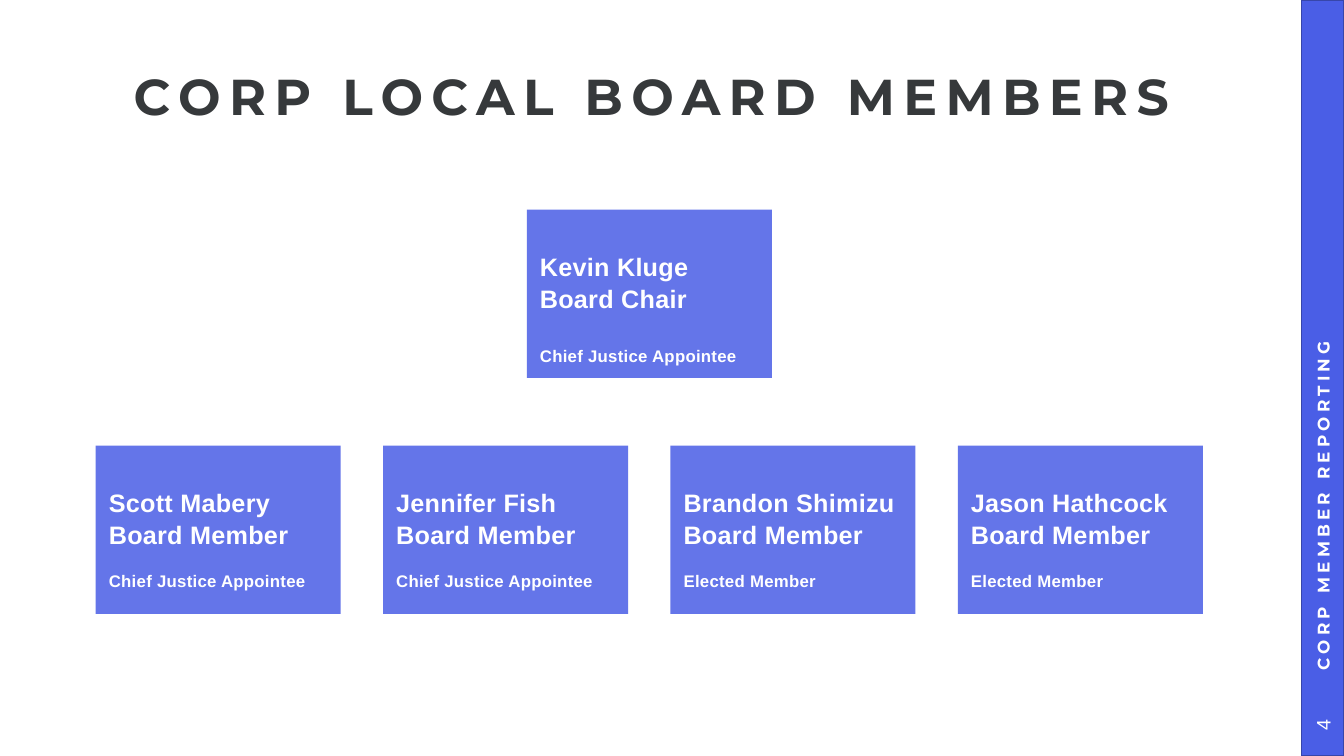
import dataclasses
import lxml.etree
import pptx
import pptx.dml.color
import pptx.enum.shapes
import pptx.enum.text
import pptx.oxml.ns
import pptx.util

Inches = pptx.util.Inches
Pt = pptx.util.Pt
Align = pptx.enum.text.PP_ALIGN
Anchor = pptx.enum.text.MSO_ANCHOR


@dataclasses.dataclass(frozen=True)
class Theme:
    """Colours, fonts and type sizes of the deck."""
    blue: str = "4A5EE6"
    edge: str = "3746AA"
    ink: str = "36393B"
    white: str = "FFFFFF"
    head: str = "Montserrat"
    body: str = "Arial"
    title: int = 36
    name: int = 18
    page: int = 14
    note: int = 12


THEME = Theme()


def color(code):
    """Turn a hex code into a colour."""
    return pptx.dml.color.RGBColor.from_string(code)


def add_run(para, text, size, face, ink, bold=True, track=0):
    """Add one styled run; track is letter spacing in points."""
    run = para.add_run()
    run.text = text
    font = run.font
    font.size, font.name, font.bold = Pt(size), face, bold
    font.color.rgb = color(ink)
    if track:
        run._r.get_or_add_rPr().set("spc", str(round(track * 100)))


def set_frame(frame, pads, anchor):
    """Set wrapping, insets in inches and vertical anchor."""
    frame.word_wrap = True
    frame.vertical_anchor = anchor
    (frame.margin_left, frame.margin_top,
     frame.margin_right, frame.margin_bottom) = map(Inches, pads)


def add_block(slide, box):
    """Add a plain blue rectangle."""
    kind = pptx.enum.shapes.MSO_SHAPE.RECTANGLE
    block = slide.shapes.add_shape(kind, *map(Inches, box))
    block.shadow.inherit = False
    block.fill.solid()
    block.fill.fore_color.rgb = color(THEME.blue)
    return block


def add_title(slide, box, text):
    """Add the wide-set heading."""
    frame = slide.shapes.add_textbox(*map(Inches, box)).text_frame
    set_frame(frame, (0, 0, 0, 0), Anchor.MIDDLE)
    para = frame.paragraphs[0]
    para.alignment, para.line_spacing = Align.CENTER, 0.9
    add_run(para, text, THEME.title, THEME.head, THEME.ink, track=6)


def add_card(slide, box, name, role, origin, gap):
    """Add one member card; gap is the space above its last line."""
    card = add_block(slide, box)
    card.line.fill.background()
    fill = card.fill._xPr.find(".//" + pptx.oxml.ns.qn("a:srgbClr"))
    alpha = lxml.etree.SubElement(fill, pptx.oxml.ns.qn("a:alpha"))
    alpha.set("val", "85000")
    frame = card.text_frame
    set_frame(frame, (0.13, 0.4, 0, 0), Anchor.TOP)
    rows = ((name, THEME.name, 0), (role, THEME.name, 0),
            (origin, THEME.note, gap))
    for row, (text, size, space) in enumerate(rows):
        para = frame.add_paragraph() if row else frame.paragraphs[0]
        para.alignment, para.line_spacing = Align.LEFT, 1.05
        if space:
            para.space_before = Pt(space)
        add_run(para, text, size, THEME.body, THEME.white, track=0.2)


def add_upright(slide, box, pads, align):
    """Add text reading upward inside a tall box and return its paragraph."""
    left, top, wide, tall = box
    flat = (left + (wide - tall) / 2, top + (tall - wide) / 2, tall, wide)
    label = slide.shapes.add_textbox(*map(Inches, flat))
    label.rotation = 270
    set_frame(label.text_frame, pads, Anchor.MIDDLE)
    para = label.text_frame.paragraphs[0]
    para.alignment = align
    return para


def add_bar(slide, box, text, page):
    """Add the side bar with its label and page number."""
    left, top, wide, tall = box
    bar = add_block(slide, box)
    bar.line.color.rgb = color(THEME.edge)
    bar.line.width = Pt(1)
    para = add_upright(slide, (left, top, wide, tall - 0.62),
                       (0.23, 0.05, 0.1, 0.05), Align.LEFT)
    add_run(para, text, THEME.note, THEME.head, THEME.white, track=3)
    para = add_upright(slide, (left, top + tall - 0.62, wide, 0.62),
                       (0.1, 0.05, 0.1, 0.05), Align.CENTER)
    add_run(para, page, THEME.page, THEME.body, THEME.white, bold=False)


def add_board(slide, box, chair, members):
    """Place the chair above an even row of members."""
    left, top, wide, tall = box
    card_w, card_h = 2.43, 1.67
    add_card(slide, (left + (wide - card_w) / 2, top, card_w, card_h),
             *chair, gap=22)
    step = (wide - card_w) / (len(members) - 1)
    for col, (name, origin) in enumerate(members):
        spot = (left + col * step, top + tall - card_h, card_w, card_h)
        add_card(slide, spot, name, "Board Member", origin, gap=14.5)


def main():
    """Build and save the slide."""
    deck = pptx.Presentation()
    deck.slide_width, deck.slide_height = Inches(13.33), Inches(7.5)
    slide = deck.slides.add_slide(deck.slide_layouts[6])
    add_bar(slide, (12.91, 0, 0.42, 7.5), "CORP MEMBER REPORTING", "4")
    add_title(slide, (0.93, 0.36, 11.07, 1.24), "CORP LOCAL BOARD MEMBERS")
    chair = ("Kevin Kluge", "Board Chair", "Chief Justice Appointee")
    members = (("Scott Mabery", "Chief Justice Appointee"),
               ("Jennifer Fish", "Chief Justice Appointee"),
               ("Brandon Shimizu", "Elected Member"),
               ("Jason Hathcock", "Elected Member"))
    add_board(slide, (0.95, 2.08, 10.98, 4.01), chair, members)
    deck.save("out.pptx")


if __name__ == "__main__":
    main()
